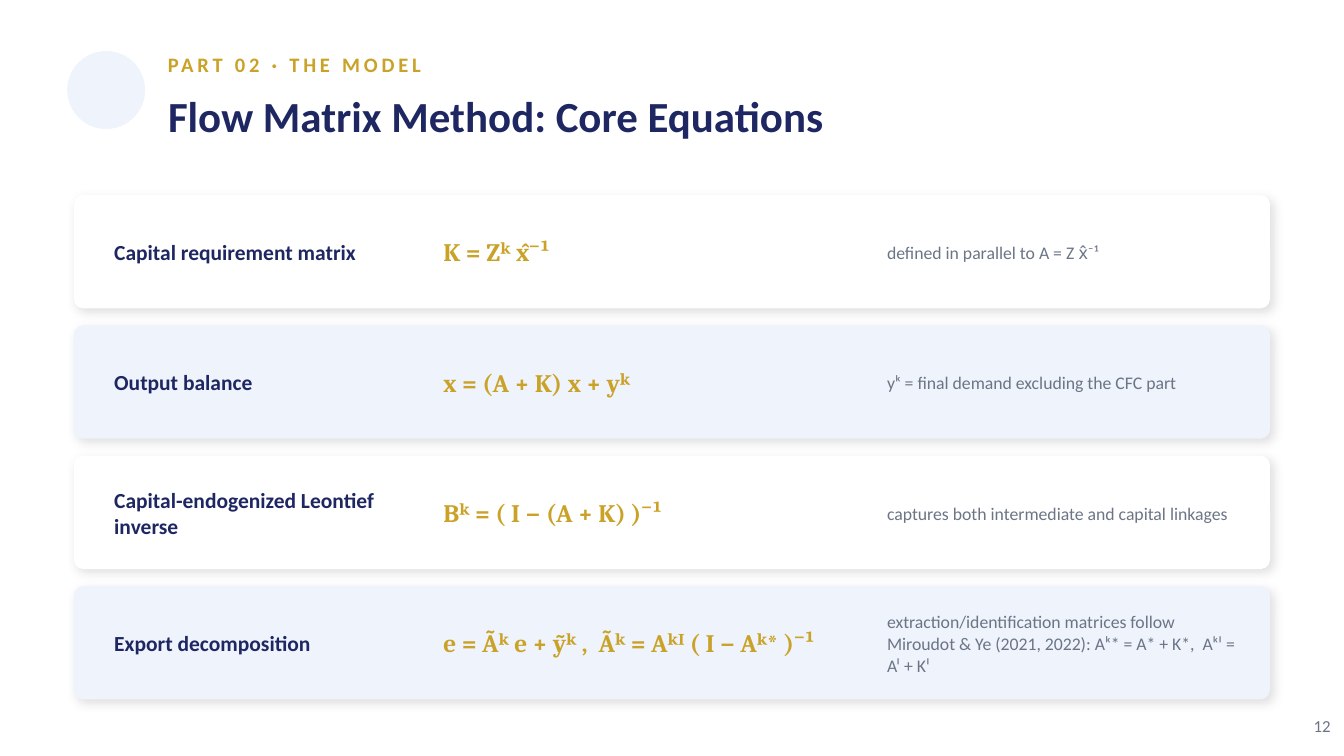
from lxml.etree import SubElement
from pptx import Presentation
from pptx.dml.color import RGBColor
from pptx.enum.shapes import MSO_SHAPE as Shape
from pptx.enum.text import MSO_ANCHOR as Anchor, MSO_AUTO_SIZE as AutoSize, PP_ALIGN as Align
from pptx.oxml.ns import qn
from pptx.util import Pt

EMU_PER_PX = 4572
NAVY, GOLD, GREY, PALE, WHITE = "1E2761", "C9A227", "6B7585", "EEF3FC", "FFFFFF"

KICKER = {"name": "Calibri", "size": Pt(11), "bold": True}
TITLE = {"name": "Calibri", "size": Pt(23), "bold": True}
LABEL = {"name": "Calibri", "size": Pt(11.5), "bold": True}
EQUATION = {"name": "Cambria", "size": Pt(13.5), "bold": True}
NOTE = {"name": "Calibri", "size": Pt(9.5), "bold": False}
PAGE_NUMBER = {"name": "Calibri", "size": Pt(9), "bold": False}

FRAME = {
    "margin_left": 0, "margin_top": 0, "margin_right": 0, "margin_bottom": 0,
    "word_wrap": True, "auto_size": AutoSize.NONE, "vertical_anchor": Anchor.MIDDLE,
}

COLUMNS = [
    (170, 470, LABEL, NAVY, Pt(14)),
    (660, 640, EQUATION, GOLD, None),
    (1320, 530, NOTE, GREY, Pt(12)),
]
ROWS = [
    ("Capital requirement matrix", "K = Zᵏ x̂⁻¹", "defined in parallel to A = Z x̂⁻¹"),
    ("Output balance", "x = (A + K) x + yᵏ", "yᵏ = final demand excluding the CFC part"),
    ("Capital-endogenized Leontief inverse", "Bᵏ = ( I − (A + K) )⁻¹",
     "captures both intermediate and capital linkages"),
    ("Export decomposition", "e = Ãᵏ e + ỹᵏ ,  Ãᵏ = Aᵏᴵ ( I − Aᵏ* )⁻¹",
     "extraction/identification matrices follow Miroudot & Ye (2021, 2022): "
     "Aᵏ* = A* + K*,  Aᵏᴵ = Aᴵ + Kᴵ"),
]
CARD_TOP, CARD_HEIGHT, CARD_PITCH, CARD_PADDING = 290, 169, 194, 24


def px(*lengths):
    return [length * EMU_PER_PX for length in lengths]


def paint(color_format, color):
    color_format.rgb = RGBColor.from_string(color)


def apply(target, values):
    for name, value in values.items():
        setattr(target, name, value)


def write(shape, text, font, color, align=Align.LEFT, line_spacing=None):
    frame = shape.text_frame
    apply(frame, FRAME)
    paragraph = frame.paragraphs[0]
    apply(paragraph, {"alignment": align, "line_spacing": line_spacing})
    run = paragraph.add_run()
    run.text = text
    apply(run.font, font)
    paint(run.font.color, color)
    return run


def add_text(slide, box, text, font, color, **layout):
    return write(slide.shapes.add_textbox(*px(*box)), text, font, color, **layout)


def add_title(slide, box, text):
    title = slide.shapes.title
    apply(title, dict(zip(("left", "top", "width", "height"), px(*box))))
    write(title, text, TITLE, NAVY)


def add_filled(slide, kind, box, color):
    shape = slide.shapes.add_shape(kind, *px(*box))
    shape.shadow.inherit = False
    shape.fill.solid()
    paint(shape.fill.fore_color, color)
    shape.line.fill.background()
    return shape


def add_soft_shadow(shape):
    effects = shape._element.spPr.find(qn("a:effectLst"))
    shadow = SubElement(effects, qn("a:outerShdw"), blurRad=str(Pt(6)), dist=str(Pt(2)),
                        dir="2700000", algn="bl", rotWithShape="0")
    color = SubElement(shadow, qn("a:srgbClr"), val="000000")
    SubElement(color, qn("a:alpha"), val="13000")


def add_card(slide, top, color, texts):
    card = add_filled(slide, Shape.ROUNDED_RECTANGLE, (110, top, 1780, CARD_HEIGHT), color)
    card.adjustments[0] = 0.083
    add_soft_shadow(card)
    for text, (left, width, font, text_color, spacing) in zip(texts, COLUMNS):
        box = (left, top + CARD_PADDING, width, CARD_HEIGHT - 2 * CARD_PADDING)
        add_text(slide, box, text, font, text_color, line_spacing=spacing)


def main():
    presentation = Presentation()
    presentation.slide_width, presentation.slide_height = px(2000, 1125)
    slide = presentation.slides.add_slide(presentation.slide_layouts[5])
    slide.background.fill.solid()
    paint(slide.background.fill.fore_color, WHITE)

    add_text(slide, (1890, 1050, 90, 60), "12", PAGE_NUMBER, GREY, align=Align.RIGHT)
    add_filled(slide, Shape.OVAL, (100, 76, 116, 116), PALE)
    kicker = add_text(slide, (250, 68, 1600, 56), "PART 02 · THE MODEL", KICKER, GOLD)
    kicker.font._element.set("spc", "200")
    add_title(slide, (250, 116, 1660, 110), "Flow Matrix Method: Core Equations")

    for index, texts in enumerate(ROWS):
        color = PALE if index % 2 else WHITE
        add_card(slide, CARD_TOP + index * CARD_PITCH, color, texts)

    presentation.save("out.pptx")


if __name__ == "__main__":
    main()
